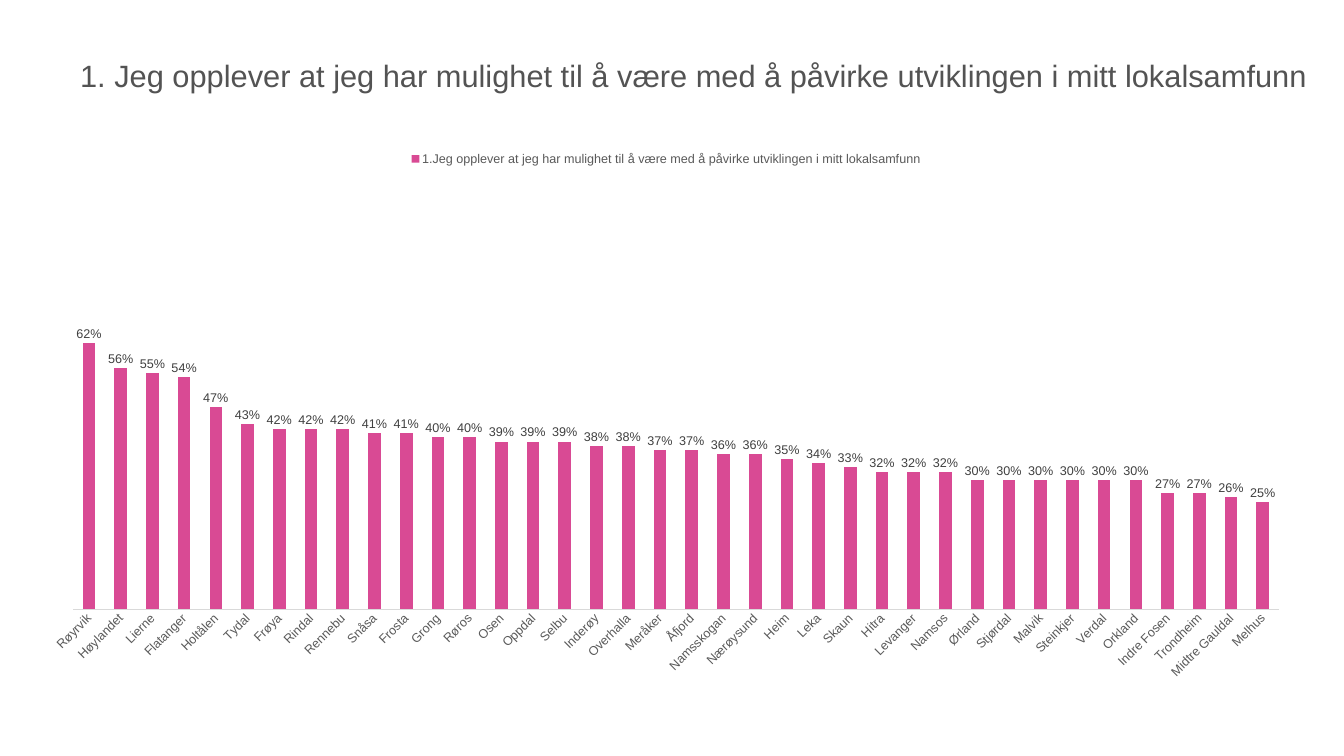
from dataclasses import dataclass

from pptx import Presentation
from pptx.chart.data import CategoryChartData
from pptx.dml.color import RGBColor
from pptx.enum.chart import XL_CHART_TYPE, XL_LABEL_POSITION, XL_LEGEND_POSITION, XL_TICK_MARK
from pptx.enum.text import MSO_ANCHOR
from pptx.util import Inches, Pt

HEADING = "1. Jeg opplever at jeg har mulighet til å være med å påvirke utviklingen i mitt lokalsamfunn"
QUESTION = "1.Jeg opplever at jeg har mulighet til å være med å påvirke utviklingen i mitt lokalsamfunn"
AGREEMENT = [
    ("Røyrvik", 62), ("Høylandet", 56), ("Lierne", 55), ("Flatanger", 54),
    ("Holtålen", 47), ("Tydal", 43), ("Frøya", 42), ("Rindal", 42),
    ("Rennebu", 42), ("Snåsa", 41), ("Frosta", 41), ("Grong", 40),
    ("Røros", 40), ("Osen", 39), ("Oppdal", 39), ("Selbu", 39),
    ("Inderøy", 38), ("Overhalla", 38), ("Meråker", 37), ("Åfjord", 37),
    ("Namsskogan", 36), ("Nærøysund", 36), ("Heim", 35), ("Leka", 34),
    ("Skaun", 33), ("Hitra", 32), ("Levanger", 32), ("Namsos", 32),
    ("Ørland", 30), ("Stjørdal", 30), ("Malvik", 30), ("Steinkjer", 30),
    ("Verdal", 30), ("Orkland", 30), ("Indre Fosen", 27), ("Trondheim", 27),
    ("Midtre Gauldal", 26), ("Melhus", 25),
]


@dataclass(frozen=True)
class Theme:
    face: str = "Arial"
    heading_size: int = 44
    chart_size: int = 18
    heading: str = "535353"
    axis_text: str = "595959"
    value_text: str = "404040"
    baseline: str = "D9D9D9"
    bar: str = "D94A94"


THEME = Theme()


def style_font(font, size, color):
    font.name = THEME.face
    font.size = Pt(size)
    font.color.rgb = RGBColor.from_string(color)


def add_heading(slide):
    heading = slide.shapes.add_textbox(Inches(1.53), Inches(0.47), Inches(24.58), Inches(2.04))
    frame = heading.text_frame
    frame.word_wrap = True
    frame.vertical_anchor = MSO_ANCHOR.MIDDLE
    frame.margin_left = frame.margin_right = frame.margin_top = frame.margin_bottom = Inches(0.06)
    frame.text = HEADING
    style_font(frame.paragraphs[0].runs[0].font, THEME.heading_size, THEME.heading)


def add_agreement_chart(slide):
    agreement = CategoryChartData(number_format="0%")
    agreement.categories = [municipality for municipality, _ in AGREEMENT]
    agreement.add_series(QUESTION, [percent / 100 for _, percent in AGREEMENT])
    chart = slide.shapes.add_chart(
        XL_CHART_TYPE.COLUMN_CLUSTERED,
        Inches(0.56), Inches(2.89), Inches(25.32), Inches(10.8), agreement,
    ).chart
    style_font(chart.font, THEME.chart_size, THEME.axis_text)
    chart.has_title = False

    chart.has_legend = True
    chart.legend.position = XL_LEGEND_POSITION.TOP
    chart.legend.include_in_layout = False
    style_font(chart.legend.font, THEME.chart_size, THEME.axis_text)

    municipalities = chart.category_axis
    municipalities.major_tick_mark = municipalities.minor_tick_mark = XL_TICK_MARK.NONE
    municipalities.format.line.color.rgb = RGBColor.from_string(THEME.baseline)
    municipalities.format.line.width = Pt(0.75)
    style_font(municipalities.tick_labels.font, THEME.chart_size, THEME.axis_text)
    municipalities._element.txPr.bodyPr.set("rot", "-2700000")

    share = chart.value_axis
    share.minimum_scale, share.maximum_scale = 0, 1
    share.has_major_gridlines = False
    share.tick_labels.number_format = "0%"
    share.tick_labels.number_format_is_linked = False
    share.visible = False

    columns = chart.plots[0]
    columns.gap_width, columns.overlap = 150, -25
    columns.vary_by_categories = False
    bars = columns.series[0]
    bars.format.fill.solid()
    bars.format.fill.fore_color.rgb = RGBColor.from_string(THEME.bar)
    percentages = bars.data_labels
    percentages.show_value = True
    percentages.number_format = "0%"
    percentages.number_format_is_linked = False
    percentages.position = XL_LABEL_POSITION.OUTSIDE_END
    style_font(percentages.font, THEME.chart_size, THEME.value_text)


def main():
    """Build the slide ranking municipalities by perceived local influence."""
    deck = Presentation()
    deck.slide_width, deck.slide_height = Inches(26.67), Inches(15)
    slide = deck.slides.add_slide(deck.slide_layouts[6])
    add_heading(slide)
    add_agreement_chart(slide)
    deck.save("out.pptx")


if __name__ == "__main__":
    main()
